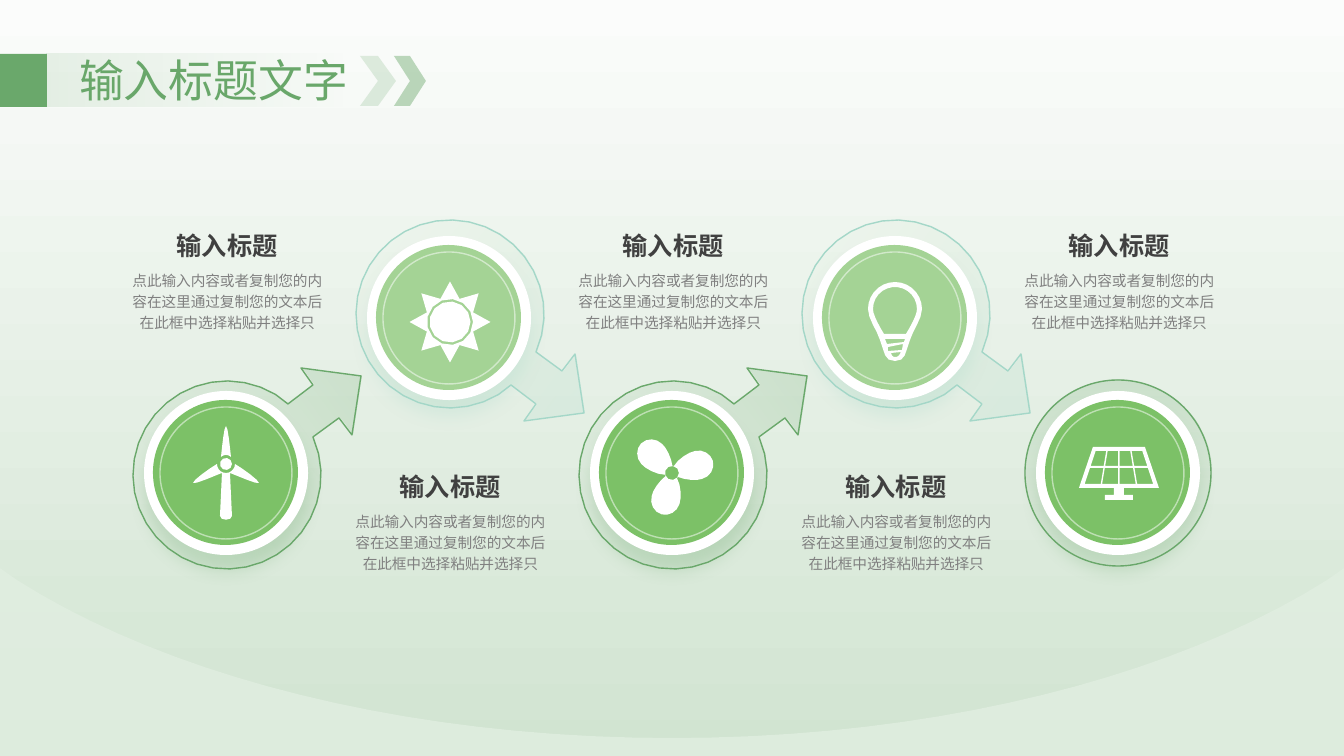
import math

import pptx
import pptx.dml.color
import pptx.enum.shapes
import pptx.enum.text
import pptx.oxml.ns
import pptx.util
from lxml import etree

PX = 12192000 / 1344
FONT = "Noto Sans CJK SC"
GREEN, MINT, LEAF, LIME, WHITE = "6AA86B", "A4D7C8", "7CC167", "A4D395", "FFFFFF"
BODY = "点此输入内容或者复制您的内容在这里通过复制您的文本后在此框中选择粘贴并选择只"
KIND = pptx.enum.shapes.MSO_SHAPE
ALIGN = pptx.enum.text.PP_ALIGN
ANCHOR = pptx.enum.text.MSO_ANCHOR
rgb = pptx.dml.color.RGBColor.from_string
qn = pptx.oxml.ns.qn

deck = pptx.Presentation()
deck.slide_width, deck.slide_height = round(1344 * PX), round(756 * PX)
slide = deck.slides.add_slide(deck.slide_layouts[5])
shapes = slide.shapes

back = slide.background.fill
back.gradient()
back.gradient_angle = 270
for stop, color in zip(back.gradient_stops, ("FBFCFB", "D1E4D1")):
    stop.color.rgb = rgb(color)


def draw(form, box, fills=(), angle=0, line=None, alpha=()):
    """Draw a preset in a box, or contours shifted by the first two of box.

    A contour holds points (x, y), arcs (x, y, radius, start, end) and
    cubic curves (three points in a row). Two fills make a gradient.
    Alpha percentages go to the fills first, then to the line.
    """
    if isinstance(form, list):
        pen = None
        for contour in form:
            dots = []
            for item in contour:
                if len(item) == 2:
                    dots.append(item)
                elif len(item) == 5:
                    x, y, r, start, end = item
                    count = 8 + int(r / 4)
                    turns = [math.radians(start + (end - start) * k / count)
                             for k in range(count + 1)]
                    dots += [(x + r * math.cos(t), y + r * math.sin(t)) for t in turns]
                else:
                    ends = (dots[-1], item[:2], item[2:4], item[4:])
                    count = 4 + int(math.dist(ends[0], ends[3]) / 40)
                    for k in range(1, count + 1):
                        t = k / count
                        mix = ((1 - t) ** 3, 3 * t * (1 - t) ** 2, 3 * t * t * (1 - t), t ** 3)
                        dots.append([sum(m * p[i] for m, p in zip(mix, ends)) for i in (0, 1)])
            dots = [((box[0] + x) * PX, (box[1] + y) * PX) for x, y in dots]
            if pen:
                pen.move_to(*dots[0])
            else:
                pen = shapes.build_freeform(*dots[0], scale=1.0)
            pen.add_line_segments(dots[1:], close=True)
        shape = pen.convert_to_shape()
    else:
        shape = shapes.add_shape(form, *(round(v * PX) for v in box))
    shape.shadow.inherit = False
    if len(fills) == 2:
        shape.fill.gradient()
        shape.fill.gradient_angle = angle
        for stop, color in zip(shape.fill.gradient_stops, fills):
            stop.color.rgb = rgb(color)
    elif fills:
        shape.fill.solid()
        shape.fill.fore_color.rgb = rgb(fills[0])
    else:
        shape.fill.background()
    if line:
        shape.line.color.rgb = rgb(line)
        shape.line.width = pptx.util.Pt(1)
    else:
        shape.line.fill.background()
    for mark, value in zip(list(shape.element.spPr.iter(qn("a:srgbClr"))), alpha):
        etree.SubElement(mark, qn("a:alpha"), val=str(value * 1000))
    return shape


def write(text, box, size, color, bold=False, align=ALIGN.CENTER,
          anchor=ANCHOR.TOP, space=1.0, shape=None):
    shape = shape or shapes.add_textbox(0, 0, 0, 0)
    shape.left, shape.top, shape.width, shape.height = (round(v * PX) for v in box)
    frame = shape.text_frame
    frame.word_wrap = True
    frame.auto_size = pptx.enum.text.MSO_AUTO_SIZE.NONE
    frame.vertical_anchor = anchor
    para = frame.paragraphs[0]
    para.alignment, para.line_spacing = align, space
    run = para.add_run()
    run.text = text
    run.font.size, run.font.bold, run.font.name = pptx.util.Pt(size), bold, FONT
    run.font.color.rgb = rgb(color)
    etree.SubElement(run.font._element, qn("a:ea"), typeface=FONT)


# Ground and title
wave = [(0, 568), (17, 580), (168, 676, 405, 738, 672, 738),
        (938, 738, 1175, 676, 1327, 580), (1344, 568), (1344, 756), (0, 756)]
draw([wave], (0, 0), ["E1EEE1"], alpha=[80])
draw(KIND.RECTANGLE, (47, 54, 308, 53), [GREEN, GREEN], alpha=[14, 0])
write("输入标题文字", (69, 48, 348, 65), 32, GREEN, align=ALIGN.LEFT, shape=shapes.title)
draw(KIND.RECTANGLE, (0, 54, 47, 53), [GREEN])
draw(KIND.CHEVRON, (360, 56, 36, 50), [GREEN], alpha=[20])
draw(KIND.CHEVRON, (394, 56, 32, 50), [GREEN], alpha=[44])

# Icons, each around the centre of its disc
turbine = [
    [(0, -9, 6, 0, 360)],
    [(5, -16), (4, -25, 2, -47, 0, -47), (-2, -47, -4, -25, -5, -16),
     (-4, -17, -2, -18, 0, -18), (2, -18, 4, -17, 5, -16)],
    [(0, -9, 9, 0, 180), (-16, -5, -34, 8, -33, 10), (-32, 12, -12, 3, -4, 0),
     (-6, 43), (-6, 48, 6, 48, 6, 43), (4, 0),
     (12, 3, 32, 12, 33, 10), (34, 8, 16, -5, 9, -9)],
]

rays = []
for k in range(16):
    far, turn = (25 if k % 2 else 40.5), math.pi * k / 8
    rays.append((1 + far * math.cos(turn), 4 + far * math.sin(turn)))
sun = [rays, [(1, 4, 23, 0, 360)], [(1, 4, 20.5, 0, 360)]]

blade = [(6, 4), (13, 7, 25, 8, 30, 6), (38, 4, 43, -4, 41, -12),
         (39, -19, 31, -24, 23, -22), (17, -21, 6, -14, 2, -7)]
blades = []
for k in range(3):
    c, s = math.cos(-math.tau * k / 3), math.sin(-math.tau * k / 3)
    for part in blade:
        pairs = zip(part[::2], part[1::2])
        blades.append([v for x, y in pairs for v in (x * c - y * s, x * s + y * c)])
fan = [blades, [(0, 0, 7, 0, 360)]]

bulb = [
    [(0, -9, 27, 180, 360), (27, 1, 18, 12, 15, 22), (10, 35, 11, 43, 0, 43),
     (-11, 43, -10, 35, -15, 22), (-18, 12, -27, 1, -27, -9)],
    [(0, -9, 22, 180, 360), (22, -5, 19, 2, 15, 9), (14, 11, 12, 14, 11, 16),
     (-11, 16), (-12, 14, -14, 11, -15, 9), (-19, 2, -22, -5, -22, -9)],
    [(-8, 26), (-10, 21), (10, 21), (9, 24)],
    [(7, 32), (-7, 33), (-7, 29), (8, 26)],
    [(-4, 35), (6, 34), (4, 38, 3, 39, 0, 39), (-2, 39, -3, 38, -4, 35)],
]

half = [(26, -26), (40, 15), (5, 15), (5, 22), (14, 22), (14, 27)]
panel = [[(1 + x, y) for x, y in half] + [(1 - x, y) for x, y in half[::-1]]]
for top, base in ((-22, -7), (-5, 11)):
    for col in range(-2, 2):
        pane = []
        for y, edge in ((top, 0), (top, 1), (base, 1), (base, 0)):
            reach = 24 + (y + 22) / 3
            pane.append((1 + reach * (col + edge) / 2 + (-0.7 if edge else 0.7), y))
        panel.append(pane)

# Five steps, low and high by turns
for step, icon in enumerate((turbine, sun, fan, bulb, panel)):
    x, high = 226 + 223 * step, step % 2
    y, flip = (318, -1) if high else (473, 1)
    tint, face = (MINT, LIME) if high else (GREEN, LEAF)
    if step < 4:
        bend = (0, 0, 94, -13 * flip, 301 * flip)
        arrow = [(134, -99 * flip), (125, -40 * flip), (112, -57 * flip), (86, -38 * flip),
                 bend, (61, -71 * flip), (86, -90 * flip), (74, -107 * flip)]
        draw([arrow], (x + 1, 314 if high else 475), [tint, LIME if high else GREEN],
             angle=180 + 36.5 * flip, line=tint, alpha=[20 if high else 22, 0])
    else:
        draw(KIND.OVAL, (x - 93, y - 93, 186, 186), [tint, tint], angle=270,
             line=tint, alpha=[22, 0])
    plate = draw(KIND.OVAL, (x - 82, y - 82, 164, 164), [WHITE])
    glow = etree.SubElement(plate.element.spPr.find(qn("a:effectLst")), qn("a:outerShdw"),
                            blurRad="152400", dist="139700", dir="5400000", rotWithShape="0")
    tone = etree.SubElement(glow, qn("a:srgbClr"), val=tint)
    etree.SubElement(tone, qn("a:alpha"), val="24000")
    draw(KIND.OVAL, (x - 73, y - 73, 145, 145), [face])
    draw(KIND.OVAL, (x - 66, y - 66, 132, 132), line=WHITE, alpha=[50])
    draw(icon, (x, y), [WHITE])
    top = 466 if high else 225
    write("输入标题", (x - 66, top, 134, 40), 18, "404040", bold=True, anchor=ANCHOR.MIDDLE)
    write(BODY, (x - 108, top + 38, 219, 75), 10.5, "808080", space=1.2)

deck.save("out.pptx")
